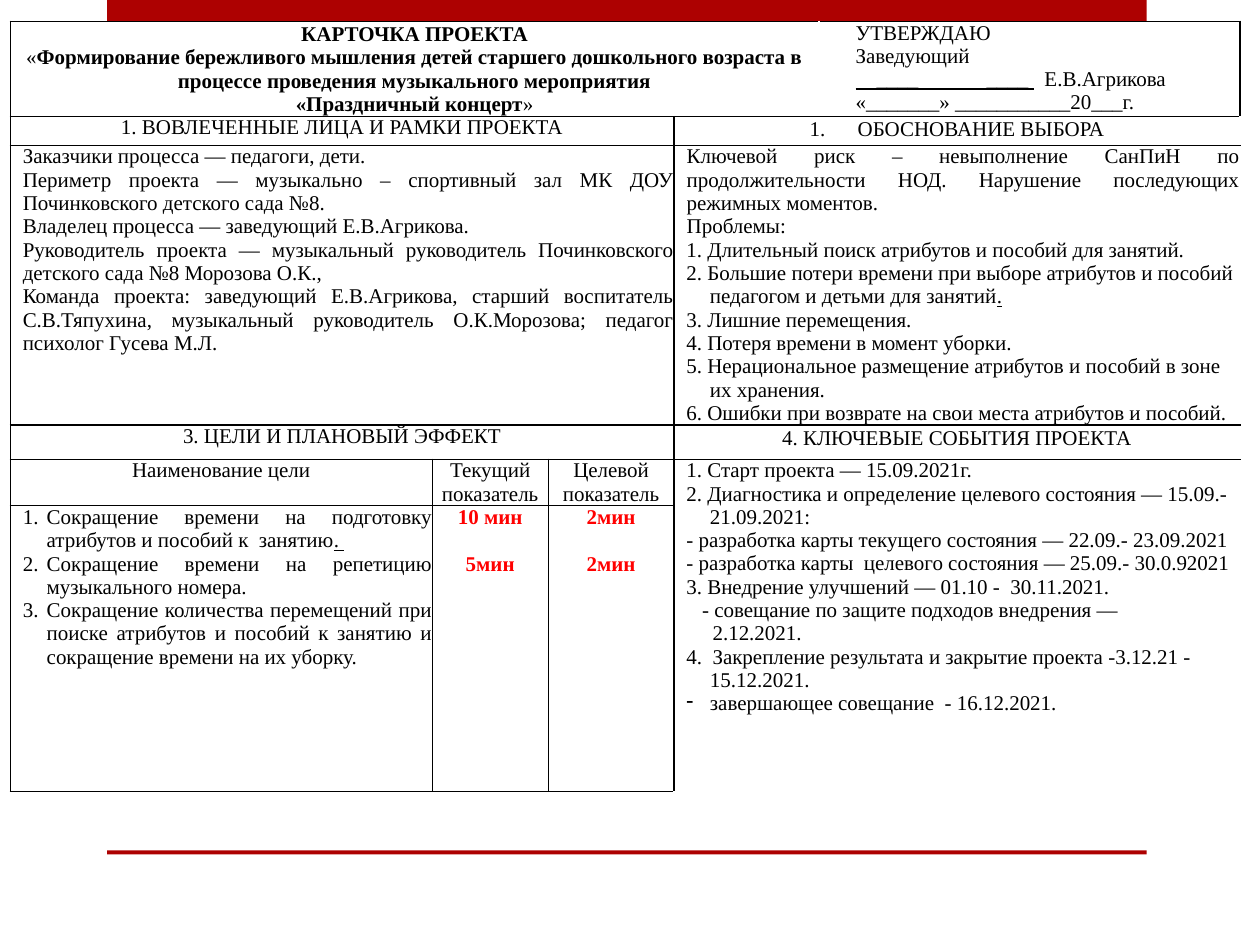
"""Builds a one-page project card: a bordered table between two red bars."""
from lxml import etree
from pptx import Presentation
from pptx.dml.color import RGBColor
from pptx.enum import shapes, text
from pptx.oxml.ns import qn
from pptx.util import Pt

FONT, SIZE = "Times New Roman", 12
BLACK, WHITE, RED, BAR = "000000", "FFFFFF", "FF0000", "AD0101"
BARS = [(61.2, 0, 594, 30.2), (61.2, 486, 594, 2.2)]
LEFT, TOP = 5.8, 12.2
COLUMNS = [241.2, 66.2, 72, 82.8, 240.5]
ROWS = [54, 16.6, 152.6, 19.4, 25.2, 163.4]
VERTICAL_LINES = [0.75, 1, 0.5, 1, 0.5, 1]
HORIZONTAL_LINES = [1, 0.5, 1, 1, 0.5, 0.5, 1]

STYLES = {
    "center": dict(align="CENTER"),
    "loose": dict(align="CENTER", spacing=1.07),
    "heading": dict(align="CENTER", spacing=1.07, left=27.4, first=-27.4, bullet="1."),
    "value": dict(align="CENTER", bold=True, color=RED),
    "next value": dict(align="CENTER", bold=True, color=RED, before=13.4),
    "approval": dict(left=20.9),
    "body": dict(align="JUSTIFY", left=7.2),
    "plain": dict(left=7.2),
    "item": dict(left=20.5, first=-13.5),
    "inner": dict(left=22, first=-6),
    "inner next": dict(left=22),
    "dash": dict(left=20.5, first=-13.5, bullet="-"),
    "goal": dict(align="JUSTIFY", left=20.9, first=-13.7, bullet="1."),
}

CELLS = [
    (0, 0, 1, 4, [
        ("loose", [("КАРТОЧКА ПРОЕКТА", "b")]),
        ("center", [("«", ""), ("Формирование бережливого мышления детей старшего дошкольного возраста в "
                                "процессе проведения музыкального мероприятия\n«Праздничный концерт", "b"),
                    ("»", "")])]),
    (0, 4, 1, 1, [
        ("approval", "УТВЕРЖДАЮ"),
        ("approval", "Заведующий"),
        ("approval", [("    ____             ____ ", "u"), ("  Е.В.Агрикова", "")]),
        ("approval", "«_______» ___________20___г.")]),
    (1, 0, 1, 3, [("center", "1. ВОВЛЕЧЕННЫЕ ЛИЦА И РАМКИ ПРОЕКТА")]),
    (1, 3, 1, 2, [("heading", "ОБОСНОВАНИЕ ВЫБОРА")]),
    (2, 0, 1, 3, [
        ("body", "Заказчики процесса — педагоги, дети."),
        ("body", "Периметр проекта — музыкально – спортивный зал МК ДОУ Починковского детского сада №8."),
        ("body", "Владелец процесса — заведующий Е.В.Агрикова."),
        ("body", "Руководитель проекта — музыкальный руководитель Починковского детского сада №8 "
                 "Морозова О.К.,"),
        ("body", "Команда проекта: заведующий Е.В.Агрикова, старший воспитатель С.В.Тяпухина, "
                 "музыкальный руководитель О.К.Морозова; педагог психолог Гусева М.Л.")]),
    (2, 3, 1, 2, [
        ("body", "Ключевой риск – невыполнение СанПиН по продолжительности НОД. "
                 "Нарушение последующих режимных моментов."),
        ("plain", "Проблемы:"),
        ("item", "1. Длительный поиск атрибутов и пособий для занятий."),
        ("item", [("2. Большие потери времени при выборе атрибутов и пособий педагогом и детьми "
                   "для занятий", ""), (".", "u")]),
        ("item", "3. Лишние перемещения."),
        ("item", "4. Потеря времени в момент уборки."),
        ("item", "5. Нерациональное размещение атрибутов и пособий в зоне их хранения."),
        ("item", "6. Ошибки при возврате на свои места атрибутов и пособий.")]),
    (3, 0, 1, 3, [("center", "3. ЦЕЛИ И ПЛАНОВЫЙ ЭФФЕКТ")]),
    (3, 3, 1, 2, [("loose", "4. КЛЮЧЕВЫЕ СОБЫТИЯ ПРОЕКТА")]),
    (4, 0, 1, 1, [("center", "Наименование цели")]),
    (4, 1, 1, 1, [("center", "Текущий показатель")]),
    (4, 2, 1, 1, [("center", "Целевой показатель")]),
    (4, 3, 2, 2, [
        ("item", "1. Старт проекта — 15.09.2021г."),
        ("item", "2. Диагностика и определение целевого состояния — 15.09.- 21.09.2021:"),
        ("item", "- разработка карты текущего состояния — 22.09.- 23.09.2021"),
        ("item", "- разработка карты  целевого состояния — 25.09.- 30.0.92021"),
        ("item", "3. Внедрение улучшений — 01.10 -  30.11.2021."),
        ("inner", "- совещание по защите подходов внедрения —"),
        ("inner next", "2.12.2021."),
        ("item", "4.  Закрепление результата и закрытие проекта -3.12.21 - 15.12.2021."),
        ("dash", "завершающее совещание  - 16.12.2021.")]),
    (5, 0, 1, 1, [
        ("goal", [("Сокращение времени на подготовку атрибутов и пособий к  занятию", ""), (". ", "u")]),
        ("goal", "Сокращение времени на репетицию музыкального номера."),
        ("goal", "Сокращение количества перемещений при поиске атрибутов и пособий к занятию "
                 "и сокращение времени на их уборку.")]),
    (5, 1, 1, 1, [("value", "10 мин"), ("next value", "5мин")]),
    (5, 2, 1, 1, [("value", "2мин"), ("next value", "2мин")]),
]


def paint(fill, color):
    fill.solid()
    fill.fore_color.rgb = RGBColor.from_string(color)


def add_border(cell, side, width):
    line = etree.SubElement(cell._tc.get_or_add_tcPr(), qn("a:ln" + side), w=str(Pt(width)))
    solid = etree.SubElement(line, qn("a:solidFill"))
    etree.SubElement(solid, qn("a:srgbClr"), val=BLACK)


def format_paragraph(para, align="LEFT", left=0, first=0, spacing=1, before=0, bullet=None,
                     bold=False, color=BLACK):
    para.alignment = getattr(text.PP_ALIGN, align)
    para.line_spacing = spacing
    para.space_before = Pt(before)
    para.space_after = Pt(0)
    settings = para._p.get_or_add_pPr()
    settings.set("marL", str(Pt(left)))
    settings.set("indent", str(Pt(first)))
    if bullet == "1.":
        etree.SubElement(settings, qn("a:buAutoNum"), type="arabicPeriod")
    elif bullet:
        etree.SubElement(settings, qn("a:buChar"), char=bullet)
    else:
        etree.SubElement(settings, qn("a:buNone"))
    para.font.name, para.font.size = FONT, Pt(SIZE)
    return bold, color


def add_runs(para, runs, bold, color):
    for words, flags in [(runs, "")] if isinstance(runs, str) else runs:
        for index, part in enumerate(words.split("\n")):
            if index:
                para.add_line_break()
            span = para.add_run()
            span.text = part
            span.font.name, span.font.size = FONT, Pt(SIZE)
            span.font.bold = bold or "b" in flags
            span.font.underline = "u" in flags
            span.font.color.rgb = RGBColor.from_string(color)


def fill_cell(table, row, column, height, width, paragraphs):
    last_row, last_column = row + height - 1, column + width - 1
    origin = table.cell(row, column)
    if height * width > 1:
        origin.merge(table.cell(last_row, last_column))
    for r in range(row, last_row + 1):
        for c in range(column, last_column + 1):
            cell = table.cell(r, c)
            cell.margin_left = cell.margin_right = cell.margin_top = cell.margin_bottom = 0
            edges = [("L", c == column, VERTICAL_LINES[c]),
                     ("R", c == last_column, VERTICAL_LINES[c + 1]),
                     ("T", r == row, HORIZONTAL_LINES[r]),
                     ("B", r == last_row, HORIZONTAL_LINES[r + 1])]
            for side, outer, weight in edges:
                if outer:
                    add_border(cell, side, weight)
            paint(cell.fill, WHITE)
    frame = origin.text_frame
    for index, (style, runs) in enumerate(paragraphs):
        para = frame.add_paragraph() if index else frame.paragraphs[0]
        add_runs(para, runs, *format_paragraph(para, **STYLES[style]))


def main():
    deck = Presentation()
    deck.slide_width, deck.slide_height = Pt(720), Pt(540)
    page = deck.slides.add_slide(deck.slide_layouts[6])
    for place in BARS:
        bar = page.shapes.add_shape(shapes.MSO_SHAPE.RECTANGLE, *map(Pt, place))
        bar.shadow.inherit = False
        paint(bar.fill, BAR)
        bar.line.fill.background()
    table = page.shapes.add_table(len(ROWS), len(COLUMNS), Pt(LEFT), Pt(TOP),
                                  Pt(sum(COLUMNS)), Pt(sum(ROWS))).table
    table.first_row = table.horz_banding = False
    for column, width in zip(table.columns, COLUMNS):
        column.width = Pt(width)
    for row, height in zip(table.rows, ROWS):
        row.height = Pt(height)
    for entry in CELLS:
        fill_cell(table, *entry)
    deck.save("out.pptx")


if __name__ == "__main__":
    main()
